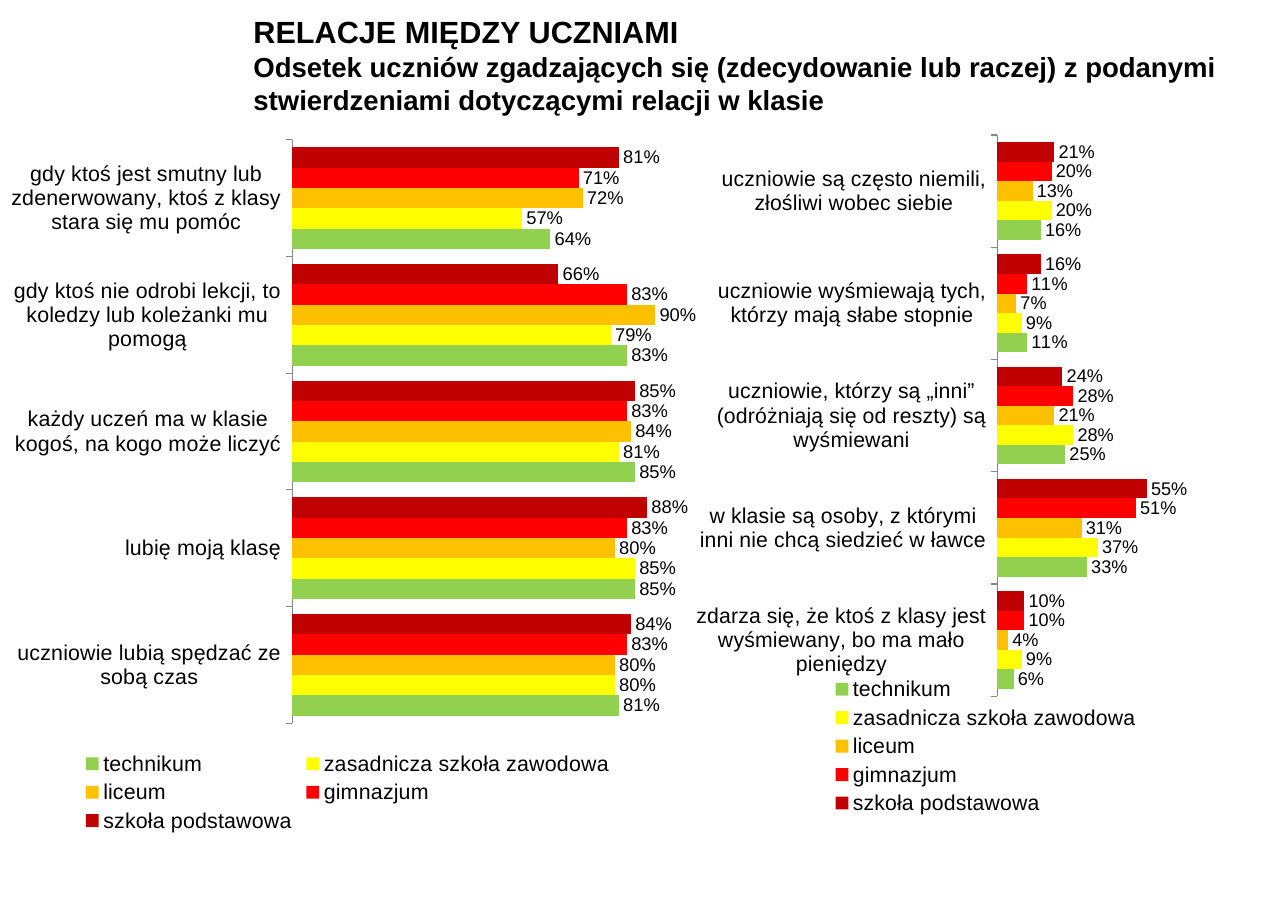
"""Build a slide comparing relations between pupils across five school types."""
from lxml.etree import SubElement
from pptx import Presentation
from pptx.chart.data import CategoryChartData
from pptx.dml.color import RGBColor
from pptx.enum.chart import XL_CHART_TYPE, XL_LABEL_POSITION, XL_LEGEND_POSITION, XL_TICK_MARK
from pptx.enum.text import MSO_ANCHOR
from pptx.oxml.ns import qn
from pptx.util import Inches, Pt

FONT = "Arial"
COLORS = {
    "text": "000000",
    "axis": "868686",
    "szkoła podstawowa": "C00000",
    "gimnazjum": "FF0000",
    "liceum": "FFC000",
    "zasadnicza szkoła zawodowa": "FFFF00",
    "technikum": "92D050",
}
SCHOOLS = list(COLORS)[2:]
PERCENT = "#,##0%"

NEGATIVE = {
    "uczniowie są często niemili, złośliwi wobec siebie": (0.21, 0.2, 0.13, 0.2, 0.16),
    "uczniowie wyśmiewają tych, którzy mają słabe stopnie": (0.16, 0.11, 0.07, 0.09, 0.11),
    "uczniowie, którzy są „inni” (odróżniają się od reszty) są wyśmiewani":
        (0.24, 0.28, 0.21, 0.28, 0.25),
    "w klasie są osoby, z którymi inni nie chcą siedzieć w ławce":
        (0.55, 0.51, 0.31, 0.37, 0.33),
    "zdarza się, że ktoś z klasy jest wyśmiewany, bo ma mało pieniędzy":
        (0.1, 0.1, 0.04, 0.09, 0.06),
}
POSITIVE = {
    "gdy ktoś jest smutny lub zdenerwowany, ktoś z klasy stara się mu pomóc":
        (0.81, 0.71, 0.72, 0.57, 0.64),
    "gdy ktoś nie odrobi lekcji, to koledzy lub koleżanki mu pomogą":
        (0.66, 0.83, 0.9, 0.79, 0.83),
    "każdy uczeń ma w klasie kogoś, na kogo może liczyć": (0.85, 0.83, 0.84, 0.81, 0.85),
    "lubię moją klasę": (0.88, 0.83, 0.8, 0.85, 0.85),
    "uczniowie lubią spędzać ze sobą czas": (0.84, 0.83, 0.8, 0.8, 0.81),
}


def rgb(name):
    return RGBColor.from_string(COLORS[name])


def set_font(font, size, bold=False):
    font.name, font.size, font.bold = FONT, Pt(size), bold
    font.color.rgb = rgb("text")


def add_title(s, box, lines):
    tf = s.shapes.add_textbox(*map(Inches, box)).text_frame
    tf.word_wrap = True
    tf.vertical_anchor = MSO_ANCHOR.TOP
    tf.margin_left = tf.margin_top = tf.margin_right = tf.margin_bottom = 0
    p = tf.paragraphs[0]
    for i, (text, size) in enumerate(lines):
        if i:
            p.add_line_break()
        r = p.add_run()
        r.text = text
        set_font(r.font, size, bold=True)


def set_plot_layout(chart, bounds):
    plot_area = chart.plots[0]._element.getparent()
    for old in plot_area.findall(qn("c:layout")):
        plot_area.remove(old)
    layout = SubElement(plot_area, qn("c:layout"))
    plot_area.insert(0, layout)
    manual = SubElement(layout, qn("c:manualLayout"))
    settings = [("layoutTarget", "inner"), ("xMode", "edge"), ("yMode", "edge")]
    for tag, value in settings + list(zip("xywh", bounds)):
        SubElement(manual, qn(f"c:{tag}")).set("val", str(value))


def add_bar_chart(s, box, answers, bounds):
    data = CategoryChartData(number_format=PERCENT)
    data.categories = list(answers)
    for school, values in zip(SCHOOLS, zip(*answers.values())):
        data.add_series(school, values)
    chart = s.shapes.add_chart(XL_CHART_TYPE.BAR_CLUSTERED, *map(Inches, box), data).chart
    set_font(chart.font, 10)
    chart.has_title = False
    chart.has_legend = True
    chart.legend.position = XL_LEGEND_POSITION.BOTTOM
    chart.legend.include_in_layout = False
    set_font(chart.legend.font, 14)

    cat, val = chart.category_axis, chart.value_axis
    cat.reverse_order = True
    cat.major_tick_mark = XL_TICK_MARK.OUTSIDE
    cat.format.line.color.rgb = rgb("axis")
    set_font(cat.tick_labels.font, 14)
    val.minimum_scale, val.maximum_scale = 0, 1
    val.has_major_gridlines = False
    val.visible = False

    plot = chart.plots[0]
    plot.gap_width = 74
    plot.vary_by_categories = False
    for series in plot.series:
        series.format.fill.solid()
        series.format.fill.fore_color.rgb = rgb(series.name)
        series.invert_if_negative = False
        labels = series.data_labels
        labels.show_value = True
        labels.number_format = PERCENT
        labels.number_format_is_linked = False
        labels.position = XL_LABEL_POSITION.OUTSIDE_END
        set_font(labels.font, 12)
    set_plot_layout(chart, bounds)


def main():
    prs = Presentation()
    prs.slide_width, prs.slide_height = Inches(11.69), Inches(8.27)
    s = prs.slides.add_slide(prs.slide_layouts[6])
    add_title(s, (2.3, 0.12, 8.81, 0.73), [
        ("RELACJE MIĘDZY UCZNIAMI", 20),
        ("Odsetek uczniów zgadzających się (zdecydowanie lub raczej) z podanymi "
         "stwierdzeniami dotyczącymi relacji w klasie", 18),
    ])
    add_bar_chart(s, (6.32, 1.22, 5.2, 6.22), NEGATIVE, (0.52, 0, 0.48, 0.82))
    add_bar_chart(s, (0, 1.14, 6.32, 6.46), POSITIVE, (0.42, 0.02, 0.58, 0.82))
    prs.save("out.pptx")


if __name__ == "__main__":
    main()
